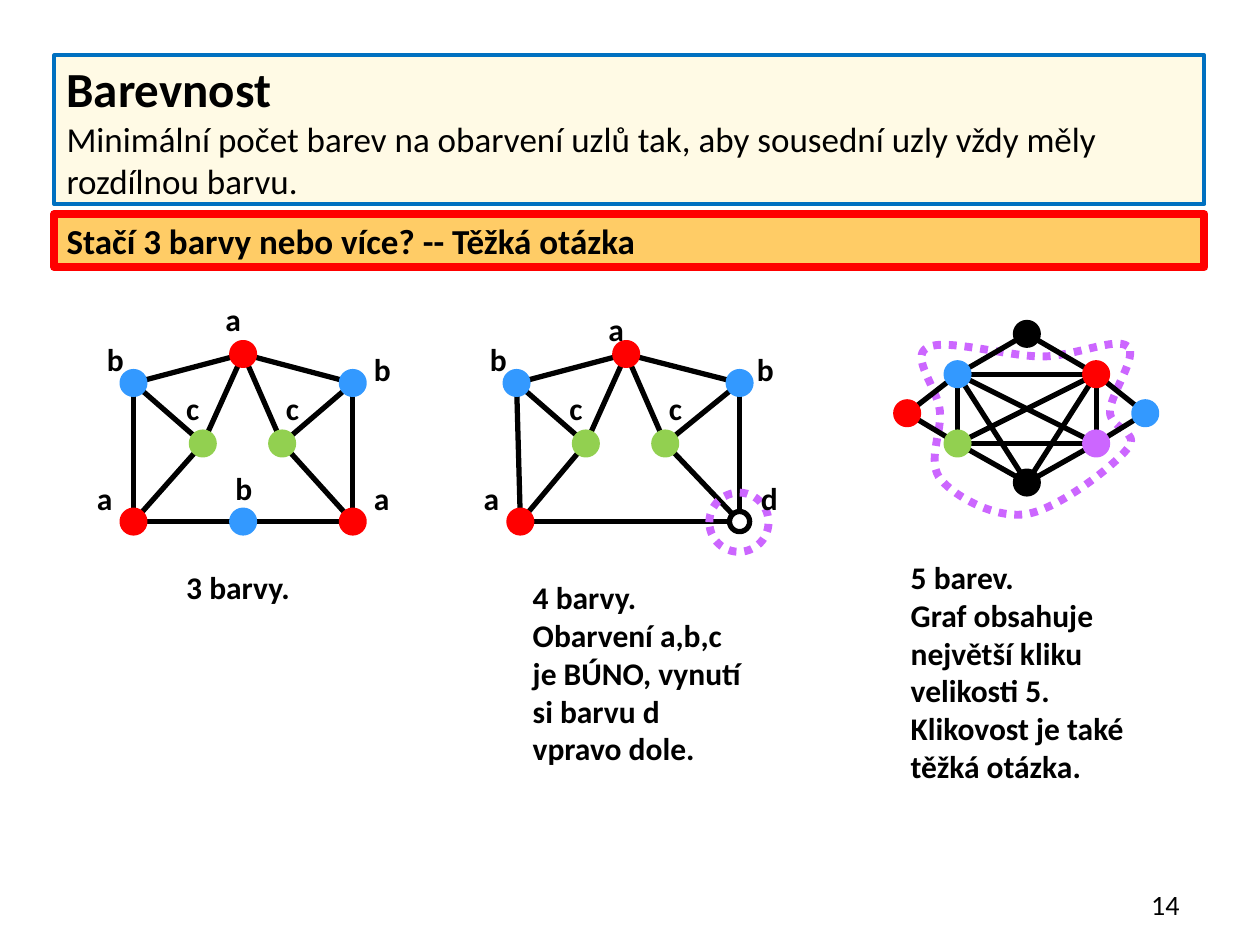
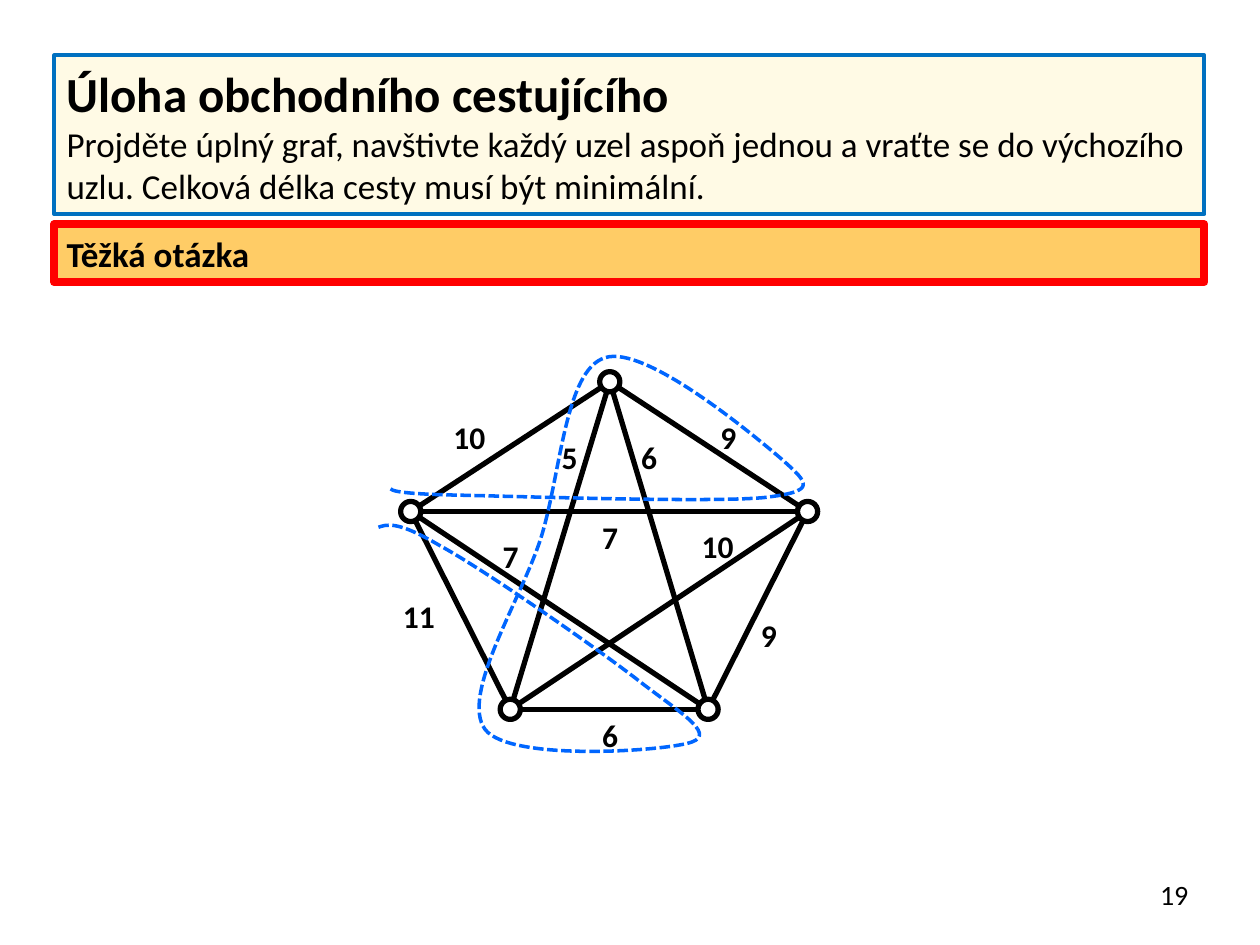
from dataclasses import dataclass

from lxml.etree import SubElement
from pptx import Presentation
from pptx.dml.color import RGBColor
from pptx.enum.dml import MSO_LINE as DASH
from pptx.enum.shapes import MSO_CONNECTOR as CONN, MSO_SHAPE as SHAPE
from pptx.enum.text import MSO_ANCHOR as ANCHOR, MSO_AUTO_SIZE as FIT, PP_ALIGN as ALIGN
from pptx.oxml.ns import qn
from pptx.util import Inches, Pt


@dataclass(frozen=True)
class Theme:
    font: str = "Calibri"
    title: int = 28
    body: int = 20
    label: int = 18
    number: int = 16
    black: str = "000000"
    white: str = "FFFFFF"
    cream: str = "FFFAE5"
    orange: str = "FFCC66"
    frame: str = "0070C0"
    red: str = "FF0000"
    blue: str = "3399FF"
    green: str = "92D050"
    violet: str = "CC66FF"
    tour: str = "0066FF"


T = Theme()
LEFT, TOP, WIDTH = 0.43, 0.44, 9.13
NODE = 0.16
EDGE_PT, BOLD_PT = 3, 4.5


def style(sp, fill, line, width, dash=None):
    sp.shadow.inherit = False
    if fill:
        sp.fill.solid()
        sp.fill.fore_color.rgb = RGBColor.from_string(fill)
    else:
        sp.fill.background()
    sp.line.color.rgb = RGBColor.from_string(line)
    sp.line.width = Pt(width)
    if dash:
        sp.line.dash_style = dash


def write(tf, lines, align=ALIGN.LEFT):
    """Fill a text frame with (text, size, bold) lines."""
    for i, (text, size, bold) in enumerate(lines):
        p = tf.add_paragraph() if i else tf.paragraphs[0]
        p.text = text
        p.alignment = align
        p.font.name, p.font.size, p.font.bold = T.font, Pt(size), bold
        p.font.color.rgb = RGBColor.from_string(T.black)


# Graphs: nodes as name -> (x, y, colour), edges as pairs of names;
# a node without colour is hollow
house = "AL AR Ac Ad Lc Rd LP RQ cP dQ"
clique_5 = "AB AC AD AE BC BD BE CD CE DE"
graph_3 = dict(
    nodes={"A": (1.93, 2.81, T.red), "L": (1.06, 3.04, T.blue), "R": (2.8, 3.04, T.blue),
           "c": (1.61, 3.52, T.green), "d": (2.24, 3.52, T.green),
           "P": (1.06, 4.14, T.red), "Q": (2.8, 4.14, T.red), "M": (1.93, 4.14, T.blue)},
    edges=house + " PM MQ")
graph_4 = dict(
    nodes={"A": (4.97, 2.81, T.red), "L": (4.1, 3.04, T.blue), "R": (5.87, 3.04, T.blue),
           "c": (4.65, 3.52, T.green), "d": (5.28, 3.52, T.green),
           "P": (4.13, 4.14, T.red), "Q": (5.87, 4.14, None)},
    edges=house + " PQ")
graph_5 = dict(
    nodes={"A": (7.6, 2.97, T.blue), "B": (8.7, 2.97, T.red), "C": (8.7, 3.52, T.violet),
           "D": (8.15, 3.83, T.black), "E": (7.6, 3.52, T.green), "T": (8.15, 2.65, T.black),
           "L": (7.2, 3.28, T.red), "R": (9.09, 3.28, T.blue)},
    edges=clique_5 + " TA TB LA LE RB RC")
cities = dict(
    nodes={"A": (4.84, 3.03, None), "B": (6.41, 4.06, None), "C": (5.62, 5.63, None),
           "D": (4.05, 5.63, None), "E": (3.26, 4.06, None)},
    edges=clique_5)

# Curves: a start point, then three Bezier points for each segment
clique = dict(
    box=(7.31, 2.73, 1.66, 1.36), behind=True,
    look=(T.white, T.violet, BOLD_PT, DASH.ROUND_DOT),
    points=[
        (8.95, 2.75),
        (8.86, 2.67), (8.53, 2.83), (8.27, 2.83), (8, 2.83), (7.49, 2.68), (7.36, 2.76),
        (7.22, 2.83), (7.44, 3.08), (7.46, 3.26), (7.48, 3.43), (7.35, 3.67), (7.47, 3.81),
        (7.59, 3.95), (7.91, 4.12), (8.15, 4.08), (8.4, 4.04), (8.84, 3.7), (8.95, 3.56),
        (9.06, 3.43), (8.81, 3.4), (8.81, 3.27), (8.81, 3.13), (9.04, 2.82), (8.95, 2.75)])
tour = dict(
    box=(2.99, 2.83, 3.38, 3.14), behind=False,
    look=(None, T.tour, 2, DASH.SQUARE_DOT),
    points=[
        (3.1, 3.88),
        (3.11, 3.89), (3.13, 3.92), (3.63, 3.93), (4.12, 3.94), (5.63, 3.99), (6.06, 3.95),
        (6.49, 3.9), (6.42, 3.84), (6.21, 3.65), (6, 3.47), (5.12, 2.73), (4.8, 2.84),
        (4.48, 2.94), (4.45, 3.78), (4.29, 4.28), (4.13, 4.77), (3.65, 5.52), (3.85, 5.79),
        (4.05, 6.05), (5.3, 5.96), (5.49, 5.89), (5.69, 5.82), (5.37, 5.64), (5.04, 5.38),
        (4.7, 5.12), (3.84, 4.52), (3.49, 4.33), (3.15, 4.13), (3.07, 4.16), (2.99, 4.19)])

slides = [
    dict(title="Barevnost",
         body="Minimální počet barev na obarvení uzlů tak, aby sousední uzly vždy měly rozdílnou barvu.",
         question="Stačí 3 barvy nebo více? -- Těžká otázka",
         title_h=1.18, question_y=1.7, question_h=0.42,
         number=("14", 7.13, 6.98),
         graphs=[graph_3, graph_4, graph_5],
         curve=clique,
         rings=[(5.63, 3.91, 0.47)],
         labels=[("a", 1.69, 2.33), ("b", 0.75, 2.65), ("b", 2.87, 2.73), ("c", 1.38, 3.04),
                 ("c", 2.17, 3.04), ("a", 0.67, 3.75), ("a", 2.87, 3.75), ("b", 1.77, 3.67),
                 ("a", 4.73, 2.41), ("b", 3.79, 2.65), ("b", 5.91, 2.73), ("c", 4.42, 3.04),
                 ("c", 5.21, 3.04), ("a", 3.74, 3.75), ("d", 5.94, 3.75)],
         captions=[(1.38, 4.46, 1.03, ["3 barvy."]),
                   (4.13, 4.54, 1.87, ["4 barvy.", "Obarvení a,b,c", "je BÚNO, vynutí",
                                       "si barvu d", "vpravo dole."]),
                   (7.13, 4.38, 1.9, ["5 barev.", "Graf obsahuje", "největší kliku",
                                      "velikosti 5.", "Klikovost je také",
                                      "těžká otázka."])]),
    dict(title="Úloha obchodního cestujícího",
         body="Projděte úplný graf, navštivte každý uzel aspoň jednou a vraťte se do výchozího uzlu. "
              "Celková délka cesty musí být minimální.",
         question="Těžká otázka",
         title_h=1.26, question_y=1.78, question_h=0.46,
         number=("19", 7.2, 6.9),
         graphs=[cities],
         curve=tour,
         rings=[],
         labels=[("10", 3.5, 3.27), ("6", 4.68, 5.63), ("9", 5.94, 4.84), ("11", 3.1, 4.69),
                 ("9", 5.62, 3.27), ("10", 5.47, 4.13), ("7", 4.68, 4.06), ("6", 4.99, 3.43),
                 ("5", 4.36, 3.43), ("7", 3.89, 4.21)],
         captions=[]),
]

prs = Presentation()
prs.slide_width, prs.slide_height = Inches(10), Inches(7.5)

for d in slides:
    s = prs.slides.add_slide(prs.slide_layouts[6])

    # Dashed curve: a freeform through the end points, its lines turned into Bezier segments
    c = d["curve"]
    left, top, width, height = (Inches(v) for v in c["box"])
    pts = [(Inches(x), Inches(y)) for x, y in c["points"]]
    fb = s.shapes.build_freeform(*pts[0])
    fb.add_line_segments(pts[3::3], close=pts[0] == pts[-1])
    curve = fb.convert_to_shape()
    style(curve, *c["look"])
    curve.left, curve.top, curve.width, curve.height = left, top, width, height
    outline = next(curve.element.iter(qn("a:path")))
    outline.set("w", str(width))
    outline.set("h", str(height))
    start = next(outline.iter(qn("a:pt")))
    start.set("x", str(pts[0][0] - left))
    start.set("y", str(pts[0][1] - top))
    for i, segment in enumerate(outline.findall(qn("a:lnTo"))):
        bezier = outline.makeelement(qn("a:cubicBezTo"))
        for x, y in pts[3 * i + 1:3 * i + 4]:
            SubElement(bezier, qn("a:pt"), x=str(x - left), y=str(y - top))
        outline.replace(segment, bezier)

    # Title box and question band
    boxes = [
        (TOP, d["title_h"], T.cream, T.frame, 2.25,
         [(d["title"], T.title, True), (d["body"], T.body, False)]),
        (d["question_y"], d["question_h"], T.orange, T.red, BOLD_PT,
         [(d["question"], T.body, True)]),
    ]
    for y, h, fill, line, weight, lines in boxes:
        sp = s.shapes.add_shape(SHAPE.RECTANGLE, Inches(LEFT), Inches(y), Inches(WIDTH), Inches(h))
        style(sp, fill, line, weight)
        sp.text_frame.word_wrap = True
        sp.text_frame.vertical_anchor = ANCHOR.MIDDLE
        write(sp.text_frame, lines)

    # Page number
    number, x, y = d["number"]
    tf = s.shapes.add_textbox(Inches(x), Inches(y), Inches(2.33), Inches(0.4)).text_frame
    tf.word_wrap = True
    tf.vertical_anchor = ANCHOR.MIDDLE
    write(tf, [(number, T.number, False)], ALIGN.RIGHT)

    # Graphs: edges first, nodes over them
    for g in d["graphs"]:
        for a, b in g["edges"].split():
            (x1, y1, _), (x2, y2, _) = g["nodes"][a], g["nodes"][b]
            edge = s.shapes.add_connector(CONN.STRAIGHT, Inches(x1), Inches(y1),
                                          Inches(x2), Inches(y2))
            edge.line.color.rgb = RGBColor.from_string(T.black)
            edge.line.width = Pt(EDGE_PT)
            SubElement(edge.element.spPr, qn("a:effectLst"))
        for x, y, colour in g["nodes"].values():
            sp = s.shapes.add_shape(SHAPE.OVAL, Inches(x - NODE / 2), Inches(y - NODE / 2),
                                    Inches(NODE), Inches(NODE))
            style(sp, colour or T.white, colour or T.black, BOLD_PT if colour else EDGE_PT)

    # Dotted rings around forced nodes
    for x, y, size in d["rings"]:
        sp = s.shapes.add_shape(SHAPE.OVAL, Inches(x), Inches(y), Inches(size), Inches(size))
        style(sp, None, T.violet, BOLD_PT, DASH.ROUND_DOT)

    # Node and edge labels, captions
    texts = [(x, y, 0.2 + 0.13 * len(text), [text]) for text, x, y in d["labels"]]
    for x, y, w, lines in texts + d["captions"]:
        h = 0.1 + 0.3 * len(lines)
        tf = s.shapes.add_textbox(Inches(x), Inches(y), Inches(w), Inches(h)).text_frame
        tf.word_wrap = False
        tf.auto_size = FIT.SHAPE_TO_FIT_TEXT
        write(tf, [(line, T.label, True) for line in lines])

    # The tour lies over its graph, the clique outline under it
    if not c["behind"]:
        curve.element.getparent().append(curve.element)

prs.save("out.pptx")
